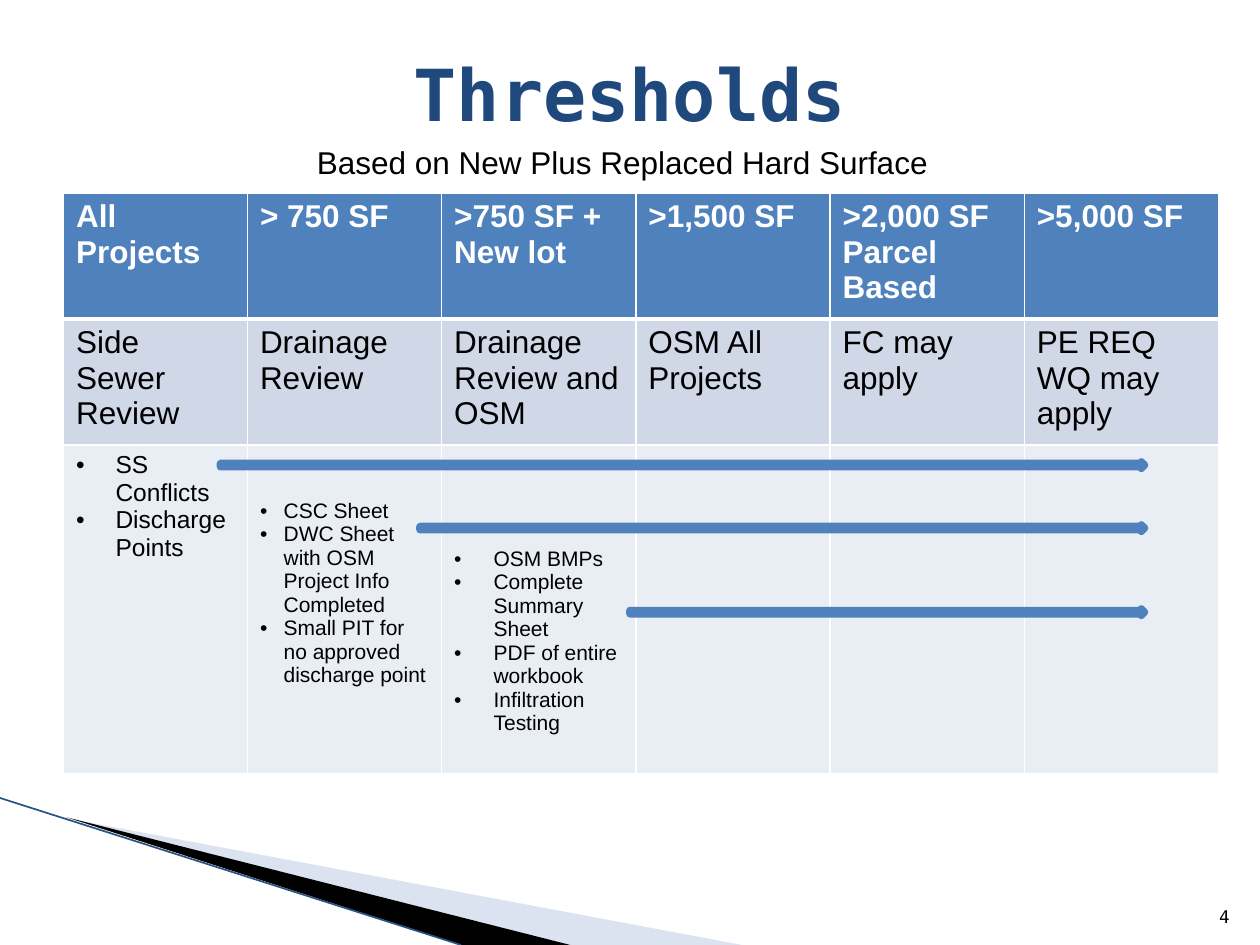
import pptx
import pptx.dml.color
import pptx.enum.shapes
import pptx.enum.text
import pptx.oxml
import pptx.oxml.ns
import pptx.util
from lxml import etree

Pt = pptx.util.Pt
ALIGN = pptx.enum.text.PP_ALIGN
ANCHOR = pptx.enum.text.MSO_ANCHOR
qn = pptx.oxml.ns.qn

COLORS = {
    "title": "1F497D",
    "text": "000000",
    "white": "FFFFFF",
    "accent": "4F81BD",
    "review_row": "D0D8E8",
    "detail_row": "E9EDF4",
    "pale_wedge": "A7B9DB",
    "edge": "2A5286",
}
BODY_FONT = "Arial"
DISPLAY_FONT = "DejaVu Sans Mono"

HEADERS = ["All Projects", "> 750 SF", ">750 SF + New lot", ">1,500 SF",
           ">2,000 SF Parcel Based", ">5,000 SF"]
REVIEWS = ["Side Sewer Review", "Drainage Review", "Drainage Review and OSM",
           "OSM All Projects", "FC may apply", "PE REQ\nWQ may apply"]
# (items, text size, hanging indent, top margin) for the first columns
REQUIREMENTS = [
    (["SS Conflicts", "Discharge Points"], 14, 22.5, 3.6),
    (["CSC Sheet", "DWC Sheet with OSM Project Info Completed",
      "Small PIT for no approved discharge point"], 12, 13.5, 31),
    (["OSM BMPs", "Complete Summary Sheet", "PDF of entire workbook",
      "Infiltration Testing"], 12, 22.5, 58.5),
]
COLUMN_WIDTHS = [105.1] + [111] * 5
ROW_HEIGHTS = [67, 68, 188]
ARROW_STARTS = [(126, 264), (240, 300), (360, 348)]
ARROW_END = 654


def rgb(name):
    return pptx.dml.color.RGBColor.from_string(COLORS[name])


def paint(fill, color):
    fill.solid()
    fill.fore_color.rgb = rgb(color)


def style_font(font, size, color, name=BODY_FONT, bold=False):
    font.size = Pt(size)
    font.name = name
    font.bold = bold
    font.color.rgb = rgb(color)


def add_text(slide, text, box, size, color, name, align, anchor, bold=False):
    frame = slide.shapes.add_textbox(*map(Pt, box)).text_frame
    frame.word_wrap = True
    frame.vertical_anchor = anchor
    frame.text = text
    paragraph = frame.paragraphs[0]
    paragraph.alignment = align
    style_font(paragraph.font, size, color, name, bold)


def add_wedge(slide, points, color, opacity=100):
    builder = slide.shapes.build_freeform(*points[0], scale=Pt(1))
    builder.add_line_segments(points[1:], close=True)
    wedge = builder.convert_to_shape()
    wedge.shadow.inherit = False
    wedge.line.fill.background()
    paint(wedge.fill, color)
    if opacity < 100:
        tint = wedge.fill._xPr.find(qn("a:solidFill"))[0]
        etree.SubElement(tint, qn("a:alpha")).set("val", str(opacity * 1000))


def add_edge(slide, start, end):
    edge = slide.shapes.add_connector(
        pptx.enum.shapes.MSO_CONNECTOR.STRAIGHT, *map(Pt, start + end))
    edge.line.color.rgb = rgb("edge")
    edge.line.width = Pt(0.95)
    etree.SubElement(edge._element.spPr, qn("a:effectLst"))


def add_arrow(slide, left, top):
    arrow = slide.shapes.add_shape(
        pptx.enum.shapes.MSO_SHAPE.RIGHT_ARROW,
        Pt(left), Pt(top), Pt(ARROW_END - left), Pt(3.6))
    arrow.shadow.inherit = False
    paint(arrow.fill, "accent")
    arrow.line.color.rgb = rgb("accent")
    arrow.line.width = Pt(4.33)


def style_cell(cell, color, bottom=1, top=1):
    """Set the white borders first, since the fill must follow them."""
    properties = cell._tc.get_or_add_tcPr()
    for side, width in (("L", 1), ("R", 1), ("T", top), ("B", bottom)):
        border = etree.SubElement(properties, qn("a:ln" + side))
        border.set("w", str(Pt(width)))
        line_fill = etree.SubElement(border, qn("a:solidFill"))
        etree.SubElement(line_fill, qn("a:srgbClr")).set("val", COLORS["white"])
    paint(cell.fill, color)


def add_bullet(paragraph, indent):
    properties = paragraph._p.get_or_add_pPr()
    properties.set("marL", str(Pt(indent)))
    properties.set("indent", str(-Pt(indent)))
    etree.SubElement(properties, qn("a:buFont")).set("typeface", BODY_FONT)
    etree.SubElement(properties, qn("a:buChar")).set("char", "•")


def fill_cell(cell, text, size, color, bold=False, indent=None):
    cell.text = text
    for paragraph in cell.text_frame.paragraphs:
        if indent is not None:
            add_bullet(paragraph, indent)
        style_font(paragraph.font, size, color, bold=bold)


def add_threshold_table(slide):
    table = slide.shapes.add_table(
        len(ROW_HEIGHTS), len(COLUMN_WIDTHS), Pt(36.3), Pt(110.2),
        Pt(sum(COLUMN_WIDTHS)), Pt(sum(ROW_HEIGHTS))).table
    for row, height in zip(table.rows, ROW_HEIGHTS):
        row.height = Pt(height)
    for index, width in enumerate(COLUMN_WIDTHS):
        table.columns[index].width = Pt(width)
        header, review, detail = (table.cell(row, index) for row in range(3))
        style_cell(header, "accent", bottom=3)
        style_cell(review, "review_row", top=3)
        style_cell(detail, "detail_row")
        fill_cell(header, HEADERS[index], 18, "white", bold=True)
        fill_cell(review, REVIEWS[index], 18, "text")
    for index, (items, size, indent, top) in enumerate(REQUIREMENTS):
        detail = table.cell(2, index)
        detail.margin_top = Pt(top)
        fill_cell(detail, "\n".join(items), size, "text", indent=indent)


def add_corner_decoration(slide):
    add_wedge(slide, [(39.6, 468), (424.5, 540), (326, 540)], "pale_wedge", 40)
    add_wedge(slide, [(38.2, 467.3), (326, 540), (263.5, 540)], "text")
    add_edge(slide, (0, 456), (263.5, 540))


def main():
    presentation = pptx.Presentation()
    presentation.slide_width = Pt(720)
    presentation.slide_height = Pt(540)
    slide = presentation.slides.add_slide(presentation.slide_layouts[6])

    add_corner_decoration(slide)
    add_text(slide, "4", (681, 504.7, 28.8, 28.8), 10, "text",
             DISPLAY_FONT, ALIGN.RIGHT, ANCHOR.BOTTOM)
    add_text(slide, "Thresholds", (0, 21.6, 720, 62.6), 41, "title",
             DISPLAY_FONT, ALIGN.CENTER, ANCHOR.MIDDLE, bold=True)
    add_threshold_table(slide)
    add_text(slide, "Based on New Plus Replaced Hard Surface",
             (174, 78, 426, 29), 18, "text", BODY_FONT, ALIGN.LEFT, ANCHOR.TOP)
    for left, top in ARROW_STARTS:
        add_arrow(slide, left, top)

    presentation.save("out.pptx")


if __name__ == "__main__":
    main()
